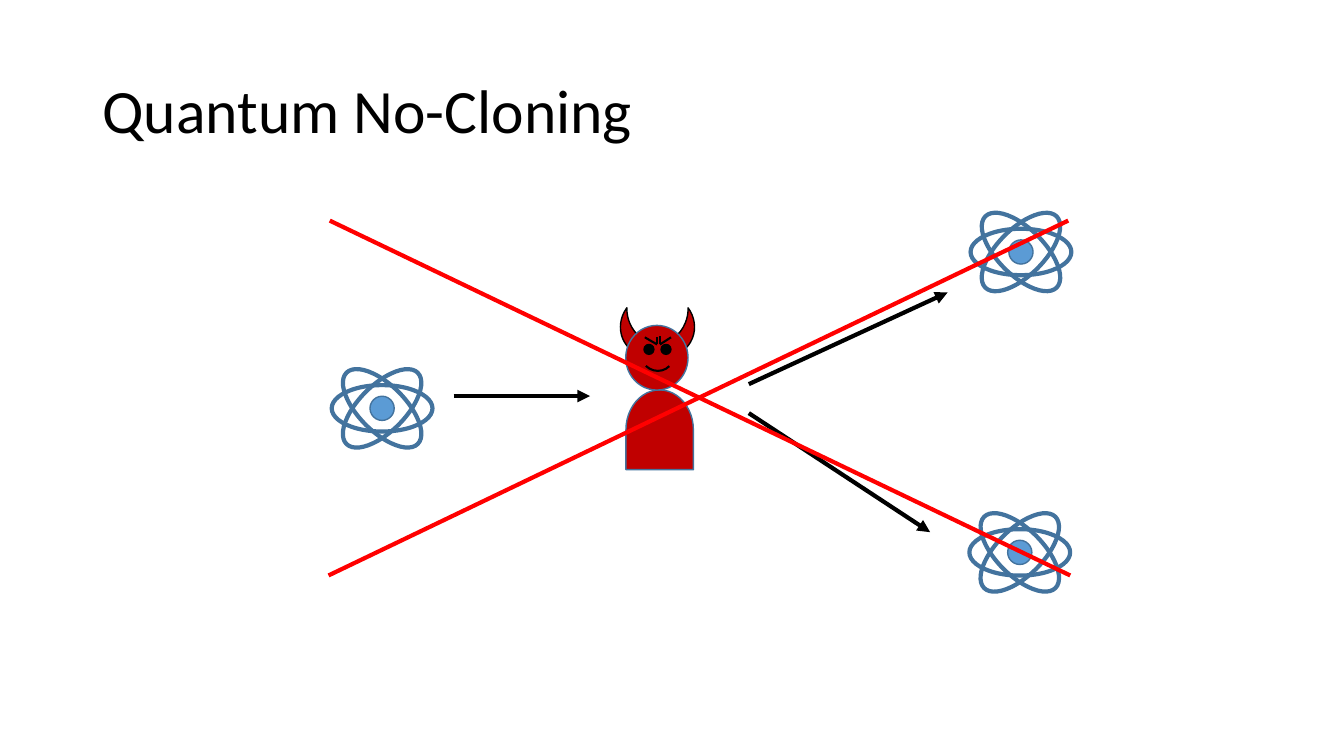
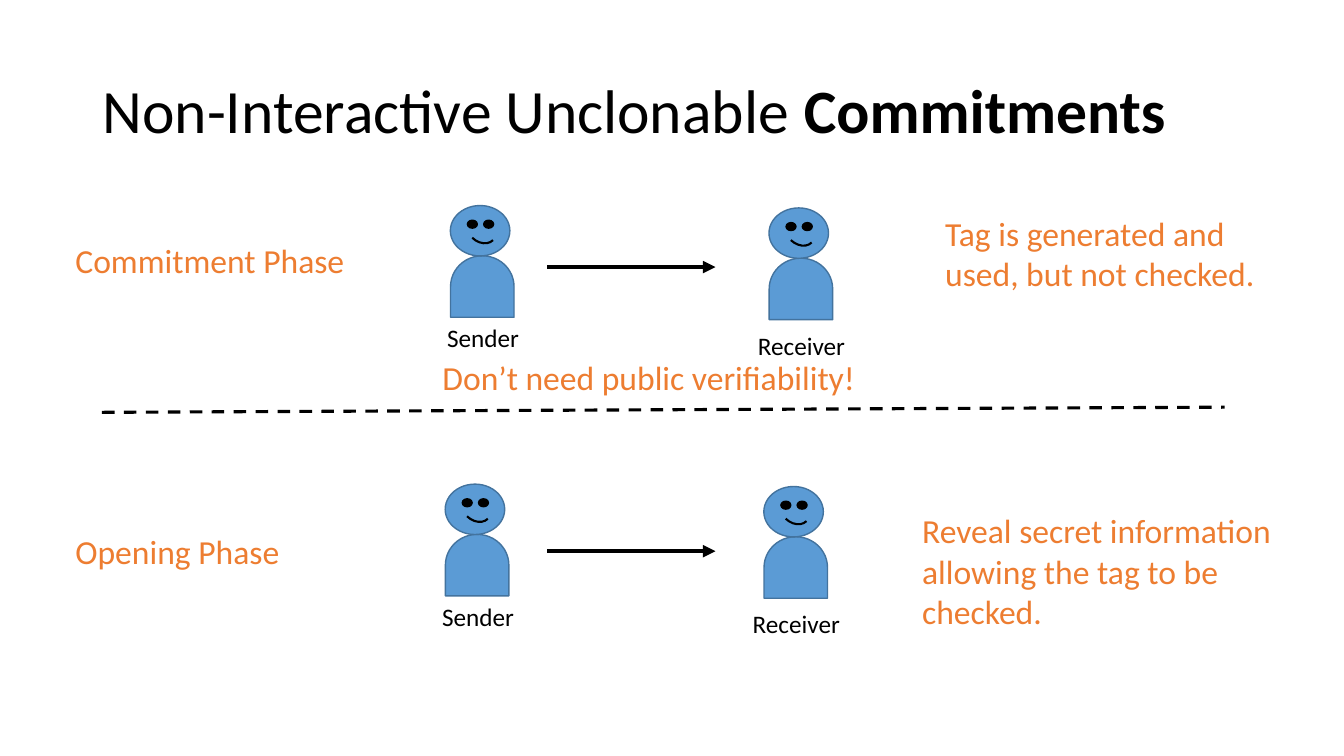
from dataclasses import dataclass

from lxml import etree
from pptx import Presentation
from pptx.dml.color import RGBColor
from pptx.enum import dml, shapes, text
from pptx.oxml import ns
from pptx.util import Cm, Pt


@dataclass(frozen=True)
class Theme:
    font: str = "Calibri"
    black: str = "000000"
    blue: str = "5B9BD5"
    outline: str = "43739E"
    devil: str = "C00000"
    cross: str = "FF0000"
    accent: str = "ED7D31"
    title: int = 44
    note: int = 24
    label: int = 18
    thin: float = 1
    face: float = 1.5
    divider: float = 2.25
    thick: float = 3


T = Theme()
KIND = shapes.MSO_SHAPE
TITLE_BOX = (2.33, 1.01, 29.21, 3.68)

CLONING_TITLE = [("Quantum No-Cloning", False)]
ATOM_CENTRES = [(9.63, 10.29), (25.73, 6.35), (25.7, 13.92)]
ORBIT = (2.54, 1.17)
NUCLEUS = (0.61, 0.61)
CLONING_ARROWS = [
    (11.43, 9.98, 14.87, 9.98),
    (18.87, 9.68, 23.88, 7.37),
    (18.87, 10.41, 23.44, 13.41),
]
CROSS = [(8.31, 5.56, 26.97, 14.5), (26.92, 5.56, 8.28, 14.5)]

DEVIL_AT = (15.77, 8.2)
DEVIL = {
    "horns": [((0, -0.43, 0.79, 1.5), 306.6), ((0.81, -0.43, 0.79, 1.5), 233.4)],
    "body": (-0.15, 1.78, 2.01, 1.7),
    "head": (0, 0, 1.57, 1.63),
    "eyes": [(0.46, 0.48, 0.25, 0.25), (0.89, 0.48, 0.25, 0.25)],
    "smile": (0.38, 0.3, 0.81, 0.86),
    "brows": [
        (1.14, 0.3, 0.86, 0.48),
        (0.86, 0.48, 0.86, 0.28),
        (0.79, 0.48, 0.48, 0.3),
        (0.79, 0.48, 0.79, 0.3),
    ],
}
PERSON = {
    "horns": [],
    "body": (0.03, 1.24, 1.55, 1.6),
    "head": (0, 0, 1.5, 1.27),
    "eyes": [(0.43, 0.37, 0.25, 0.2), (0.84, 0.37, 0.25, 0.2)],
    "smile": (0.45, 0.16, 0.64, 0.84),
    "brows": [],
}

COMMITMENT_TITLE = [("Non-Interactive Unclonable ", False), ("Commitments", True)]
PHASES = [
    {
        "name": ("Commitment Phase", (1.65, 5.92, 7.34, 1.27)),
        "origin": (11.35, 5.18),
        "arrow_y": 6.73,
        "remark": (
            "Tag is generated and used, but not checked.",
            (23.57, 5.23, 9.22, 2.31),
        ),
    },
    {
        "name": ("Opening Phase", (1.65, 13.26, 5.72, 1.27)),
        "origin": (11.22, 12.2),
        "arrow_y": 13.89,
        "remark": (
            "Reveal secret information allowing the tag to be checked.",
            (22.99, 12.73, 10.13, 3.33),
        ),
    },
]
ROLES = [
    ("Sender", (0, 0), (-0.33, 2.82, 2.34, 1.02)),
    ("Receiver", (8.03, 0.06), (-0.53, 2.95, 2.74, 1.02)),
]
PHASE_ARROW_X = (13.79, 18.03)
DIVIDER = (2.57, 10.39, 30.86, 10.26)
VERIFIABILITY = ("Don’t need public verifiability!", (10.9, 8.86, 11.61, 1.27))


def shift(box, origin):
    return (box[0] + origin[0], box[1] + origin[1], *box[2:])


def rgb(color):
    return RGBColor.from_string(color)


def add_run(p, words, size, color, bold=False):
    r = p.add_run()
    r.text = words
    r.font.name = T.font
    r.font.size = Pt(size)
    r.font.bold = bold
    r.font.color.rgb = rgb(color)


def add_slide(prs, title_runs):
    s = prs.slides.add_slide(prs.slide_layouts[5])
    sp = s.shapes.title
    sp.left, sp.top, sp.width, sp.height = map(Cm, TITLE_BOX)
    tf = sp.text_frame
    tf.auto_size = text.MSO_AUTO_SIZE.NONE
    tf.vertical_anchor = text.MSO_ANCHOR.MIDDLE
    p = tf.paragraphs[0]
    p.alignment = text.PP_ALIGN.LEFT
    p.line_spacing = 0.9
    for words, bold in title_runs:
        add_run(p, words, T.title, T.black, bold)
    return s


def add_text(s, words, box, size, color, wrap=False):
    tf = s.shapes.add_textbox(*map(Cm, box)).text_frame
    tf.word_wrap = wrap
    tf.auto_size = text.MSO_AUTO_SIZE.SHAPE_TO_FIT_TEXT
    add_run(tf.paragraphs[0], words, size, color)


def add_form(parent, kind, box, fill, line, width=T.thin, rotation=0):
    sp = parent.shapes.add_shape(kind, *map(Cm, box))
    sp.shadow.inherit = False
    sp.rotation = rotation
    if fill:
        sp.fill.solid()
        sp.fill.fore_color.rgb = rgb(fill)
    else:
        sp.fill.background()
    sp.line.color.rgb = rgb(line)
    sp.line.width = Pt(width)


def add_line(parent, ends, color=T.black, width=T.thick, arrow=False, dash=False):
    line = parent.shapes.add_connector(shapes.MSO_CONNECTOR.STRAIGHT, *map(Cm, ends))
    line.line.color.rgb = rgb(color)
    line.line.width = Pt(width)
    if dash:
        line.line.dash_style = dml.MSO_LINE.DASH
    if arrow:
        ln = line.line._get_or_add_ln()
        etree.SubElement(ln, ns.qn("a:tailEnd"), type="triangle")
    etree.SubElement(line._element.spPr, ns.qn("a:effectLst"))


def add_atom(s, centre):
    def around(size):
        return (centre[0] - size[0] / 2, centre[1] - size[1] / 2, *size)

    group = s.shapes.add_group_shape()
    for rotation in (45, 315, 0):
        add_form(group, KIND.OVAL, around(ORBIT), None, T.outline, T.thick, rotation)
    add_form(group, KIND.OVAL, around(NUCLEUS), T.blue, T.outline)


def add_figure(s, parts, origin, color):
    group = s.shapes.add_group_shape()

    def place(kind, box, fill, line, width=T.thin, rotation=0):
        add_form(group, kind, shift(box, origin), fill, line, width, rotation)

    for box, rotation in parts["horns"]:
        place(KIND.MOON, box, color, T.black, rotation=rotation)
    place(KIND.FLOWCHART_DELAY, parts["body"], color, T.outline, rotation=270)
    place(KIND.OVAL, parts["head"], color, T.outline)
    for box in parts["eyes"]:
        place(KIND.OVAL, box, T.black, T.black)
    place(KIND.ARC, parts["smile"], None, T.black, T.face, 133.9)
    for x1, y1, x2, y2 in parts["brows"]:
        ends = (*shift((x1, y1), origin), *shift((x2, y2), origin))
        add_line(group, ends, width=T.face)


def build_cloning(prs):
    s = add_slide(prs, CLONING_TITLE)
    add_figure(s, DEVIL, DEVIL_AT, T.devil)
    for centre in ATOM_CENTRES:
        add_atom(s, centre)
    for ends in CLONING_ARROWS:
        add_line(s, ends, arrow=True)
    for ends in CROSS:
        add_line(s, ends, T.cross)


def build_commitments(prs):
    s = add_slide(prs, COMMITMENT_TITLE)
    add_line(s, DIVIDER, width=T.divider, dash=True)
    for phase in PHASES:
        add_text(s, *phase["name"], T.note, T.accent)
        for role, offset, label_box in ROLES:
            head = shift(offset, phase["origin"])
            add_figure(s, PERSON, head, T.blue)
            add_text(s, role, shift(label_box, head), T.label, T.black)
        x1, x2 = PHASE_ARROW_X
        add_line(s, (x1, phase["arrow_y"], x2, phase["arrow_y"]), arrow=True)
        add_text(s, *phase["remark"], T.note, T.accent, wrap=True)
    add_text(s, *VERIFIABILITY, T.note, T.accent, wrap=True)


def main():
    prs = Presentation()
    prs.slide_width, prs.slide_height = Cm(33.87), Cm(19.05)
    build_cloning(prs)
    build_commitments(prs)
    prs.save("out.pptx")


if __name__ == "__main__":
    main()
